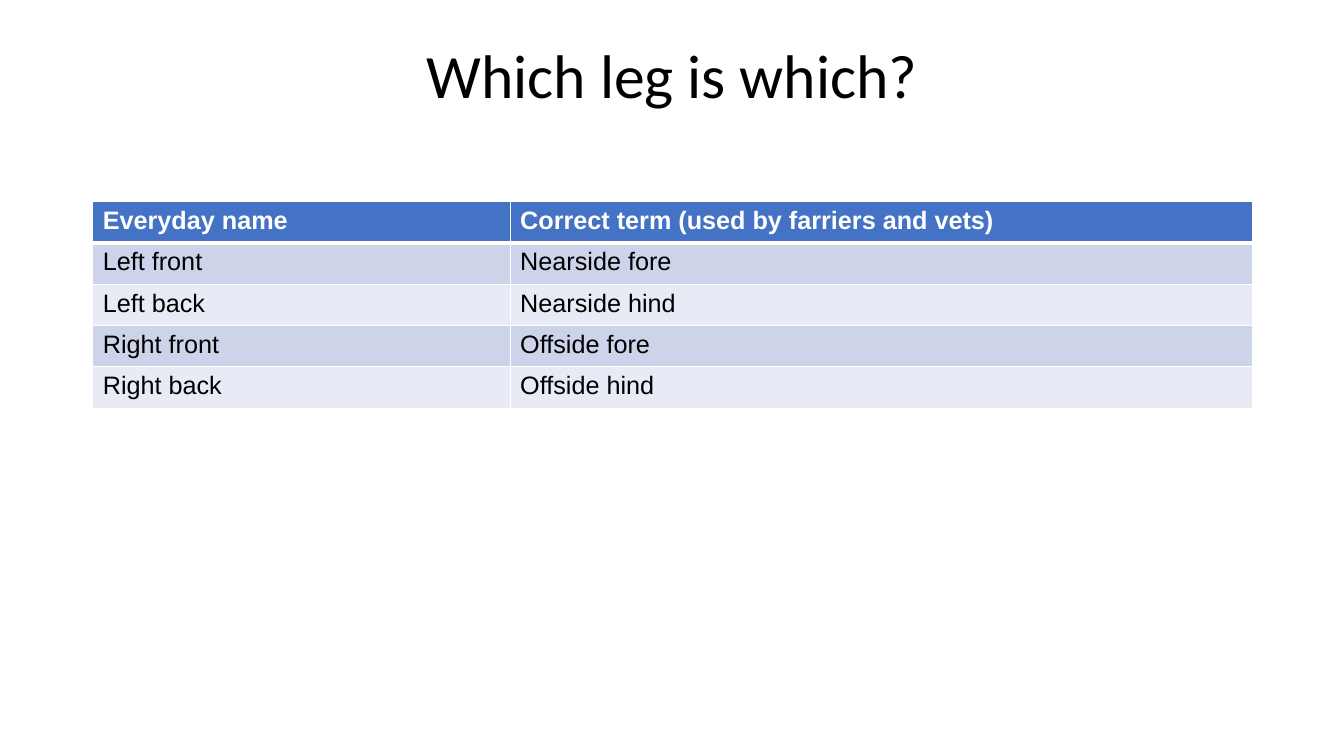
from lxml import etree
from pptx import Presentation
from pptx.dml.color import RGBColor
from pptx.enum.text import MSO_ANCHOR, PP_ALIGN
from pptx.oxml.ns import qn
from pptx.util import Inches, Pt

TOP = MSO_ANCHOR.TOP
CENTER = PP_ALIGN.CENTER

TITLE = "Which leg is which?"
LEG_NAMES = [
    ("Everyday name", "Correct term (used by farriers and vets)"),
    ("Left front", "Nearside fore"),
    ("Left back", "Nearside hind"),
    ("Right front", "Offside fore"),
    ("Right back", "Offside hind"),
]

THEME = {
    "header": "4472C4",
    "bands": ("CDD4EA", "E8EBF5"),
    "border": "FFFFFF",
    "title": {"name": "Calibri", "size": Pt(44), "bold": False, "color": "000000"},
    "header_text": {"name": "Arial", "size": Pt(18), "bold": True, "color": "FFFFFF"},
    "body_text": {"name": "Arial", "size": Pt(18), "bold": False, "color": "000000"},
    "thin": Pt(1),
    "thick": Pt(3),
}

LEFT, WIDTH = 0.92, 11.5
TITLE_TOP, TITLE_HEIGHT = 0.4, 1.45
TABLE_TOP, ROW_HEIGHT = 2, 0.41
COLUMN_WIDTHS = (4.14, 7.36)


def write(paragraph, text, style):
    span = paragraph.add_run()
    span.text = text
    for name, value in style.items():
        if name == "color":
            span.font.color.rgb = RGBColor.from_string(value)
        else:
            setattr(span.font, name, value)


def add_borders(cell, widths):
    """Draw cell borders; widths maps each side (L, R, T, B) to a line width."""
    properties = cell._tc.get_or_add_tcPr()
    for side, width in widths.items():
        line = etree.SubElement(properties, qn(f"a:ln{side}"), w=str(int(width)))
        fill = etree.SubElement(line, qn("a:solidFill"))
        etree.SubElement(fill, qn("a:srgbClr"), val=THEME["border"])


def add_title(page):
    box = page.shapes.add_textbox(
        Inches(LEFT), Inches(TITLE_TOP), Inches(WIDTH), Inches(TITLE_HEIGHT))
    frame = box.text_frame
    frame.word_wrap = True
    frame.vertical_anchor = TOP
    para = frame.paragraphs[0]
    para.alignment = CENTER
    para.line_spacing = 0.9
    write(para, TITLE, THEME["title"])


def add_leg_table(page):
    row_count = len(LEG_NAMES)
    table = page.shapes.add_table(
        row_count, len(COLUMN_WIDTHS), Inches(LEFT), Inches(TABLE_TOP),
        Inches(WIDTH), Inches(ROW_HEIGHT * row_count)).table
    for column, width in zip(table.columns, COLUMN_WIDTHS):
        column.width = Inches(width)
    thin, thick = THEME["thin"], THEME["thick"]
    for row, names in enumerate(LEG_NAMES):
        table.rows[row].height = Inches(ROW_HEIGHT)
        is_header = row == 0
        color = THEME["header"] if is_header else THEME["bands"][(row - 1) % 2]
        style = THEME["header_text" if is_header else "body_text"]
        borders = {"L": thin, "R": thin,
                   "T": thick if row == 1 else thin,
                   "B": thick if is_header else thin}
        for column, name in enumerate(names):
            cell = table.cell(row, column)
            add_borders(cell, borders)
            cell.fill.solid()
            cell.fill.fore_color.rgb = RGBColor.from_string(color)
            write(cell.text_frame.paragraphs[0], name, style)


def main():
    deck = Presentation()
    deck.slide_width, deck.slide_height = Inches(13.33), Inches(7.5)
    page = deck.slides.add_slide(deck.slide_layouts[6])
    add_title(page)
    add_leg_table(page)
    deck.save("out.pptx")


if __name__ == "__main__":
    main()
